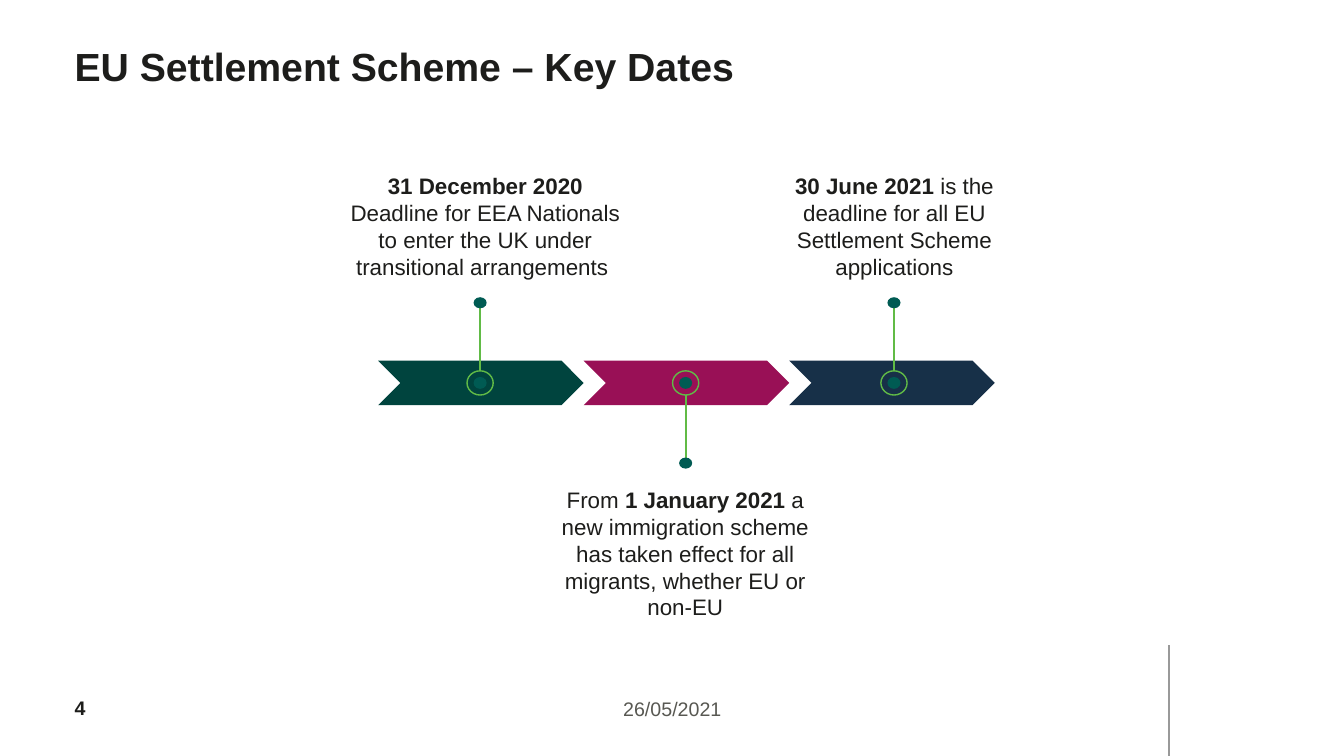
from dataclasses import dataclass

from lxml import etree
from pptx import Presentation
from pptx import util as u
from pptx.dml.color import RGBColor
from pptx.enum import shapes, text
from pptx.oxml import ns

COLOURS = {
    "ink": "1D1D1B",
    "grey": "585852",
    "rule": "999999",
    "green": "00443E",
    "magenta": "991056",
    "navy": "173048",
    "dot": "005B53",
    "lime": "61BB46",
}
FONT = "Arial"
CHEVRON_LEFT, CHEVRON_TOP = 9.53, 9.09
CHEVRON_WIDTH, CHEVRON_HEIGHT = 5.18, 1.12
AXIS = 9.65
RING_WIDTH, RING_HEIGHT = 0.66, 0.61
DOT_WIDTH, DOT_HEIGHT, TIP_HEIGHT = 0.33, 0.3, 0.28
STEM_END, TIP_CENTRE = 1.88, 2.02


@dataclass(frozen=True)
class Box:
    left: float
    top: float
    width: float
    height: float

    def lengths(self) -> list:
        return [u.Cm(value) for value in (self.left, self.top, self.width, self.height)]


@dataclass(frozen=True)
class Run:
    wording: str
    bold: bool = False


@dataclass(frozen=True)
class Milestone:
    colour: str
    centre: float
    direction: int
    label: Box
    paragraphs: list


MILESTONES = [
    Milestone("green", 12.1, -1, Box(8.46, 4.22, 7.54, 3.0), [
        [Run("31 December 2020", True)],
        [Run("Deadline for EEA Nationals to enter the UK under transitional arrangements ")],
    ]),
    Milestone("magenta", 17.28, 1, Box(13.56, 12.12, 7.42, 3.68), [
        [Run("From "), Run("1 January 2021", True),
         Run(" a new immigration scheme has taken effect for all migrants, whether EU or non-EU")],
    ]),
    Milestone("navy", 22.53, -1, Box(18.69, 4.22, 7.7, 3.0), [
        [Run("30 June 2021", True),
         Run(" is the deadline for all EU Settlement Scheme applications")],
    ]),
]


def rgb(colour: str) -> RGBColor:
    return RGBColor.from_string(COLOURS[colour])


def write(shape, paragraphs: list, *, size: float, colour: str = "ink",
          align=text.PP_ALIGN.LEFT, anchor=text.MSO_ANCHOR.TOP,
          margins: tuple = (0.25, 0.13, 0.25, 0.13)) -> None:
    frame = shape.text_frame
    frame.word_wrap = True
    frame.auto_size = text.MSO_AUTO_SIZE.NONE
    frame.vertical_anchor = anchor
    (frame.margin_left, frame.margin_top,
     frame.margin_right, frame.margin_bottom) = [u.Cm(margin) for margin in margins]
    for index, runs in enumerate(paragraphs):
        paragraph = frame.paragraphs[0] if index == 0 else frame.add_paragraph()
        paragraph.alignment = align
        for item in runs:
            run = paragraph.add_run()
            run.text = item.wording
            run.font.name = FONT
            run.font.size = u.Pt(size)
            run.font.bold = item.bold
            run.font.color.rgb = rgb(colour)


def add_preset(slide, preset, box: Box, fill: str, outline: str = ""):
    shape = slide.shapes.add_shape(preset, *box.lengths())
    shape.shadow.inherit = False
    shape.fill.solid()
    shape.fill.fore_color.rgb = rgb(fill)
    if outline:
        shape.line.color.rgb = rgb(outline)
        shape.line.width = u.Pt(1)
    else:
        shape.line.fill.background()
    return shape


def add_ellipse(slide, centre: float, middle: float, width: float, height: float,
                fill: str, outline: str = "") -> None:
    box = Box(centre - width / 2, middle - height / 2, width, height)
    add_preset(slide, shapes.MSO_SHAPE.OVAL, box, fill, outline)


def add_vertical(slide, x: float, start: float, end: float, colour: str, weight: float) -> None:
    line = slide.shapes.add_connector(
        shapes.MSO_CONNECTOR.STRAIGHT, u.Cm(x), u.Cm(start), u.Cm(x), u.Cm(end))
    line.line.color.rgb = rgb(colour)
    line.line.width = u.Pt(weight)
    etree.SubElement(line._element.spPr, ns.qn("a:effectLst"))


def add_marker(slide, milestone: Milestone) -> None:
    centre, direction = milestone.centre, milestone.direction
    add_ellipse(slide, centre, AXIS, RING_WIDTH, RING_HEIGHT, milestone.colour, "lime")
    add_ellipse(slide, centre, AXIS, DOT_WIDTH, DOT_HEIGHT, "dot")
    add_vertical(slide, centre, AXIS + direction * RING_HEIGHT / 2,
                 AXIS + direction * STEM_END, "lime", 1.5)
    add_ellipse(slide, centre, AXIS + direction * TIP_CENTRE, DOT_WIDTH, TIP_HEIGHT, "dot")


def main() -> None:
    presentation = Presentation()
    presentation.slide_width = u.Cm(33.87)
    presentation.slide_height = u.Cm(19.05)
    slide = presentation.slides.add_slide(presentation.slide_layouts[5])

    title = slide.shapes.title
    title.left, title.top, title.width, title.height = Box(1.88, 0.99, 27.08, 2.49).lengths()
    write(title, [[Run("EU Settlement Scheme – Key Dates", True)]], size=28,
          margins=(0, 0.08, 0, 0))

    date = slide.shapes.add_textbox(*Box(11.23, 17.42, 11.43, 0.86).lengths())
    write(date, [[Run("26/05/2021")]], size=14, colour="grey", align=text.PP_ALIGN.CENTER)
    number = slide.shapes.add_textbox(*Box(1.88, 17.32, 1.88, 1.02).lengths())
    write(number, [[Run("4", True)]], size=14, anchor=text.MSO_ANCHOR.MIDDLE,
          margins=(0, 0, 0, 0))
    add_vertical(slide, 29.46, 16.26, 19.05, "rule", 1.25)

    for index, milestone in enumerate(MILESTONES):
        chevron = Box(CHEVRON_LEFT + index * CHEVRON_WIDTH, CHEVRON_TOP,
                      CHEVRON_WIDTH, CHEVRON_HEIGHT)
        add_preset(slide, shapes.MSO_SHAPE.CHEVRON, chevron, milestone.colour)
        add_marker(slide, milestone)
        label = slide.shapes.add_textbox(*milestone.label.lengths())
        write(label, milestone.paragraphs, size=16, align=text.PP_ALIGN.CENTER)

    presentation.save("out.pptx")


if __name__ == "__main__":
    main()
